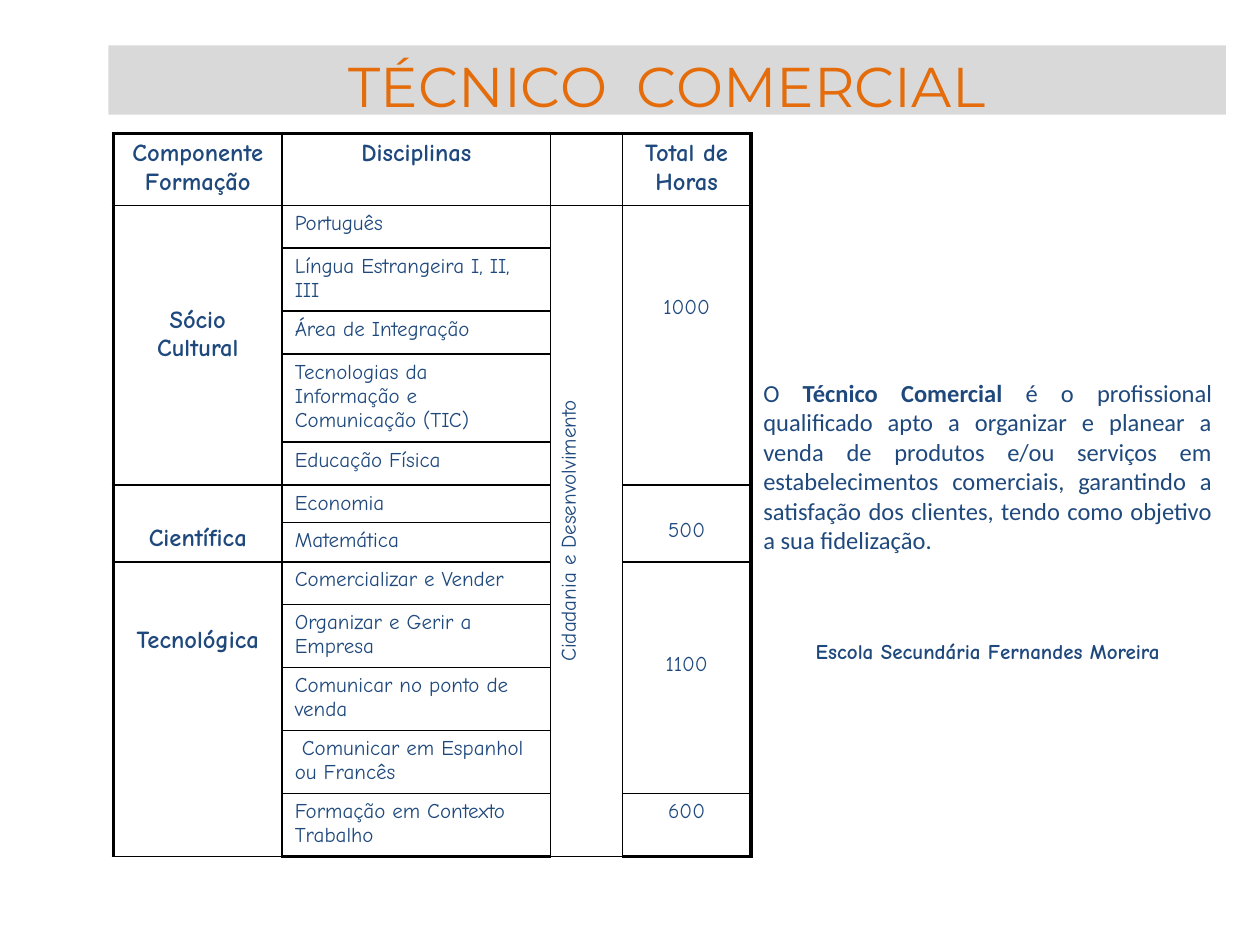
from dataclasses import dataclass

import pptx
import pptx.dml.color
import pptx.enum.shapes
import pptx.enum.text
import pptx.oxml
import pptx.oxml.ns
import pptx.util
from lxml import etree

Inches = pptx.util.Inches
Pt = pptx.util.Pt
ALIGN = pptx.enum.text.PP_ALIGN
ANCHOR = pptx.enum.text.MSO_ANCHOR


@dataclass(frozen=True)
class Theme:
    band: str = "D9D9D9"
    title: str = "E46C0A"
    text: str = "1F497D"
    border: str = "000000"
    title_font: str = "Montserrat"
    table_font: str = "Comic Neue"
    body_font: str = "Calibri"
    title_size: int = 32
    head_size: int = 14
    body_size: int = 12
    thin: float = 1
    thick: float = 2.25


T = Theme()

COLS = [1.34, 2.13, 0.57, 1.02]
ROWS = [0.57, 0.34, 0.5, 0.34, 0.7, 0.34, 0.3, 0.31, 0.34, 0.5, 0.5, 0.5, 0.5]
HEADERS = ["Componente Formação", "Disciplinas", "", "Total de Horas"]
SUBJECTS = [
    "Português",
    "Língua Estrangeira I, II, III",
    "Área de Integração",
    "Tecnologias da Informação e Comunicação (TIC)",
    "Educação Física",
    "Economia",
    "Matemática",
    "Comercializar e Vender",
    "Organizar e Gerir a Empresa",
    "Comunicar no ponto de venda",
    " Comunicar em Espanhol ou Francês",
    "Formação em Contexto Trabalho",
]
# First row, last row, text, top margin
COMPONENTS = [(1, 5, "Sócio Cultural", 0.8), (6, 7, "Científica", 0.31),
              (8, 12, "Tecnológica", 0.51)]
HOURS = [(1, 5, "1000", 0.72), (6, 7, "500", 0.27),
         (8, 11, "1100", 0.72), (12, 12, "600", 0.05)]


def style_run(r, font, size, color, bold=False):
    r.font.name = font
    r.font.size = Pt(size)
    r.font.bold = bold
    r.font.color.rgb = pptx.dml.color.RGBColor.from_string(color)


def fill_cell(cell, text, size=T.body_size, bold=False, align=ALIGN.CENTER, top=0.05):
    cell.text_frame.text = text
    cell.margin_top = Inches(top)
    p = cell.text_frame.paragraphs[0]
    p.alignment = align
    for r in p.runs:
        style_run(r, T.table_font, size, T.text, bold)


def set_borders(cell, row, col):
    """Thick lines on the outer edge, thin lines inside."""
    outer = {"lnL": col == 0, "lnR": col == len(COLS) - 1,
             "lnT": row == 0, "lnB": row == len(ROWS) - 1}
    tcPr = cell._tc.get_or_add_tcPr()
    qn = pptx.oxml.ns.qn
    for tag, is_outer in outer.items():
        width = Pt(T.thick if is_outer else T.thin)
        ln = etree.SubElement(tcPr, qn(f"a:{tag}"), w=str(width))
        fill = etree.SubElement(ln, qn("a:solidFill"))
        etree.SubElement(fill, qn("a:srgbClr"), val=T.border)


def add_title(s, x, y, w, h):
    sp = s.shapes.add_shape(pptx.enum.shapes.MSO_SHAPE.RECTANGLE,
                            Inches(x), Inches(y), Inches(w), Inches(h))
    sp.shadow.inherit = False
    sp.fill.solid()
    sp.fill.fore_color.rgb = pptx.dml.color.RGBColor.from_string(T.band)
    sp.line.fill.background()
    tf = sp.text_frame
    tf.text = "TÉCNICO  COMERCIAL"
    tf.word_wrap = False
    tf.vertical_anchor = ANCHOR.TOP
    p = tf.paragraphs[0]
    p.alignment = ALIGN.CENTER
    style_run(p.runs[0], T.title_font, T.title_size, T.title)


def add_curriculum(s, x, y):
    tbl = s.shapes.add_table(len(ROWS), len(COLS), Inches(x), Inches(y),
                             Inches(sum(COLS)), Inches(sum(ROWS))).table
    tbl.first_row = tbl.horz_banding = False
    for col, width in zip(tbl.columns, COLS):
        col.width = Inches(width)
    for row, height in zip(tbl.rows, ROWS):
        row.height = Inches(height)
    for i in range(len(ROWS)):
        for j in range(len(COLS)):
            cell = tbl.cell(i, j)
            set_borders(cell, i, j)
            cell.fill.background()

    # Header row and subjects
    for j, text in enumerate(HEADERS):
        fill_cell(tbl.cell(0, j), text, T.head_size, True)
    for i, text in enumerate(SUBJECTS, 1):
        fill_cell(tbl.cell(i, 1), text, align=ALIGN.LEFT)

    # Merged groups on both sides
    for j, groups, size, bold in [(0, COMPONENTS, T.head_size, True),
                                  (3, HOURS, T.body_size, False)]:
        for first, last, text, top in groups:
            cell = tbl.cell(first, j)
            if last > first:
                cell.merge(tbl.cell(last, j))
            fill_cell(cell, text, size, bold, top=top)

    # Vertical strip across all subjects
    strip = tbl.cell(1, 2)
    strip.merge(tbl.cell(len(ROWS) - 1, 2))
    fill_cell(strip, "Cidadania e Desenvolvimento")
    strip._tc.get_or_add_tcPr().set("vert", "vert270")


def add_profile(s, x, y, w, h):
    tf = s.shapes.add_textbox(Inches(x), Inches(y), Inches(w), Inches(h)).text_frame
    tf.word_wrap = True
    p = tf.paragraphs[0]
    p.alignment = ALIGN.JUSTIFY
    for text, bold in [
        ("O ", False),
        ("Técnico Comercial ", True),
        ("é o profissional qualificado apto a organizar e planear a venda de "
         "produtos e/ou serviços em estabelecimentos comerciais, garantindo a "
         "satisfação dos clientes, tendo como objetivo a sua fidelização.", False),
    ]:
        r = p.add_run()
        r.text = text
        style_run(r, T.body_font, T.head_size, T.text, bold)

    # School name
    p = tf.add_paragraph()
    p.text = "Escola Secundária Fernandes Moreira"
    p.alignment = ALIGN.CENTER
    p.space_before = Pt(48)
    style_run(p.runs[0], T.table_font, T.body_size, T.text, True)


def main():
    prs = pptx.Presentation()
    prs.slide_width, prs.slide_height = Inches(10), Inches(7.5)
    s = prs.slides.add_slide(prs.slide_layouts[6])
    add_title(s, 0.86, 0.36, 8.87, 0.55)
    add_curriculum(s, 0.9, 1.06)
    add_profile(s, 5.96, 2.95, 3.76, 2.73)
    prs.save("out.pptx")


if __name__ == "__main__":
    main()
